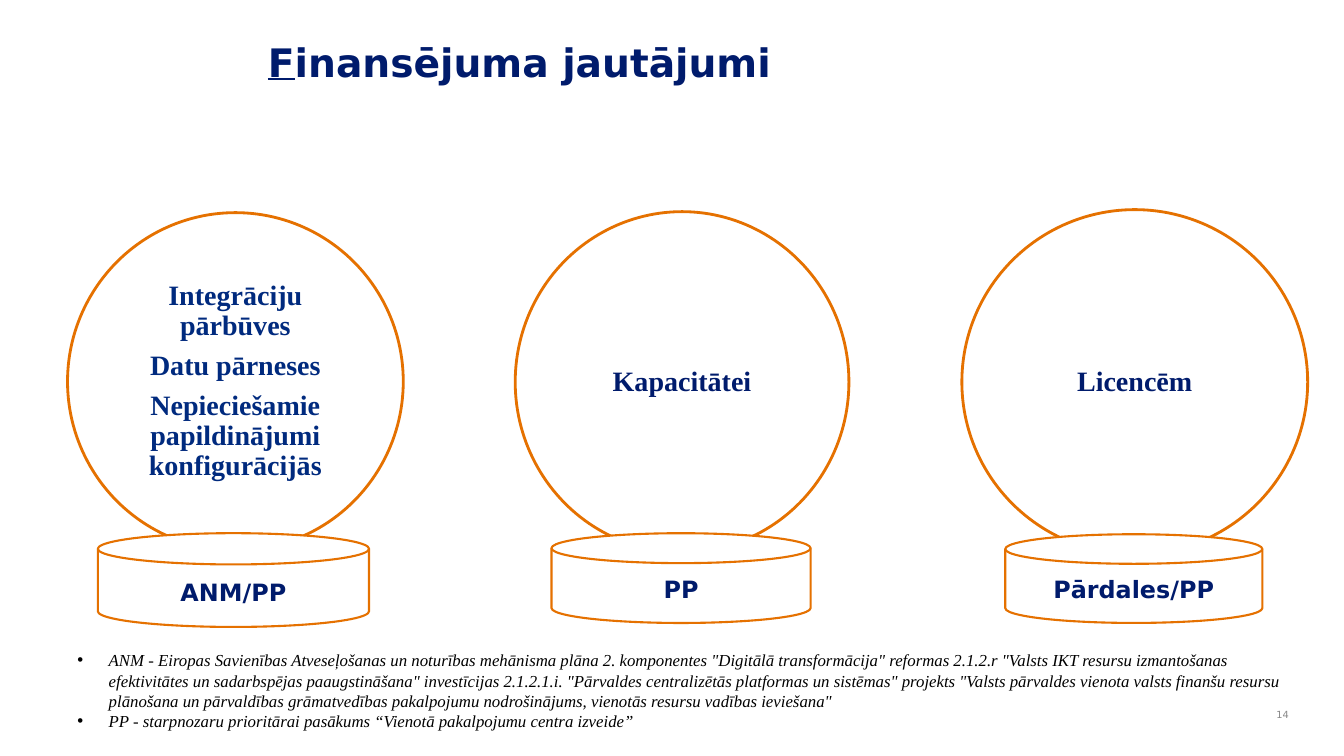
from dataclasses import dataclass

from lxml import etree
from pptx import Presentation
from pptx.dml.color import RGBColor
from pptx.enum.shapes import MSO_SHAPE
from pptx.enum.text import MSO_ANCHOR, PP_ALIGN
from pptx.oxml.ns import qn
from pptx.util import Inches, Pt

ELLIPSE = MSO_SHAPE.OVAL
DISK = MSO_SHAPE.FLOWCHART_MAGNETIC_DISK
TOP, MIDDLE, BOTTOM = MSO_ANCHOR.TOP, MSO_ANCHOR.MIDDLE, MSO_ANCHOR.BOTTOM
LEFT, CENTER, RIGHT = PP_ALIGN.LEFT, PP_ALIGN.CENTER, PP_ALIGN.RIGHT


@dataclass(frozen=True)
class Theme:
    sans: str = "DejaVu Sans"
    serif: str = "Times New Roman"
    navy: str = "001B6C"
    blue: str = "002A7E"
    orange: str = "E57100"
    white: str = "FFFFFF"
    black: str = "000000"
    gray: str = "898989"
    title_size: int = 28
    circle_size: int = 20
    disk_size: int = 17
    note_size: int = 12
    number_size: int = 7


def write_span(para, text, *, font, size, color, bold=False, italic=False, underline=False):
    span = para.add_run()
    span.text = text
    span.font.name = font
    span.font.size = Pt(size)
    span.font.color.rgb = RGBColor.from_string(color)
    span.font.bold = bold
    span.font.italic = italic
    span.font.underline = underline


def add_bullet(para, indent):
    properties = para._p.get_or_add_pPr()
    properties.set("marL", str(Inches(indent)))
    properties.set("indent", str(-Inches(indent)))
    etree.SubElement(properties, qn("a:buFont")).set("typeface", "Arial")
    etree.SubElement(properties, qn("a:buChar")).set("char", "•")


class SlideBuilder:
    def __init__(self, slide, theme):
        self.slide = slide
        self.theme = theme

    def fill_frame(self, frame, paragraphs, *, anchor, align, line_spacing=1.0,
                   space_after=0, bullet_indent=0, **style):
        frame.word_wrap = True
        frame.vertical_anchor = anchor
        for index, text in enumerate(paragraphs):
            para = frame.paragraphs[0] if index == 0 else frame.add_paragraph()
            para.alignment = align
            para.line_spacing = line_spacing
            para.space_after = Pt(space_after)
            if bullet_indent:
                add_bullet(para, bullet_indent)
            write_span(para, text, **style)

    def text_box(self, left, top, width, height, paragraphs, **style):
        box = self.slide.shapes.add_textbox(
            Inches(left), Inches(top), Inches(width), Inches(height))
        self.fill_frame(box.text_frame, paragraphs, **style)
        return box

    def outlined_shape(self, kind, left, top, width, height, line_width):
        shape = self.slide.shapes.add_shape(
            kind, Inches(left), Inches(top), Inches(width), Inches(height))
        shape.shadow.inherit = False
        shape.fill.solid()
        shape.fill.fore_color.rgb = RGBColor.from_string(self.theme.white)
        shape.line.color.rgb = RGBColor.from_string(self.theme.orange)
        shape.line.width = Pt(line_width)
        return shape

    def circle(self, place, paragraphs, color):
        frame = self.outlined_shape(ELLIPSE, *place, line_width=2).text_frame
        frame.margin_left = frame.margin_right = Inches(0.03)
        frame.margin_top = frame.margin_bottom = Inches(0.03)
        self.fill_frame(frame, paragraphs, anchor=MIDDLE, align=CENTER,
                        line_spacing=0.9, space_after=7, font=self.theme.serif,
                        size=self.theme.circle_size, color=color, bold=True)

    def disk(self, place, label):
        shape = self.outlined_shape(DISK, *place, line_width=1.5)
        self.fill_frame(shape.text_frame, [label], anchor=BOTTOM, align=CENTER,
                        font=self.theme.sans, size=self.theme.disk_size,
                        color=self.theme.navy, bold=True)

    def title(self, first_letter, rest):
        style = dict(font=self.theme.sans, size=self.theme.title_size,
                     color=self.theme.navy, bold=True)
        box = self.text_box(2.56, 0.33, 7.53, 1.19, [first_letter],
                            anchor=TOP, align=LEFT, underline=True, **style)
        write_span(box.text_frame.paragraphs[0], rest, **style)

    def footnotes(self, notes):
        self.text_box(0.67, 6.4, 12.22, 0.91, notes, anchor=TOP, align=LEFT,
                      bullet_indent=0.31, font=self.theme.serif,
                      size=self.theme.note_size, color=self.theme.black, italic=True)

    def page_number(self, number):
        self.text_box(12.44, 6.92, 0.44, 0.33, [number], anchor=MIDDLE, align=RIGHT,
                      font=self.theme.sans, size=self.theme.number_size,
                      color=self.theme.gray)


def main():
    theme = Theme()
    deck = Presentation()
    deck.slide_width = Inches(13.33)
    deck.slide_height = Inches(7.5)
    page = SlideBuilder(deck.slides.add_slide(deck.slide_layouts[6]), theme)

    needs = [
        ((0.67, 2.11, 3.33, 3.35),
         ["Integrāciju pārbūves", "Datu pārneses",
          "Nepieciešamie papildinājumi konfigurācijās"],
         theme.blue, (0.97, 5.29, 2.69, 0.93), "ANM/PP"),
        ((5.11, 2.1, 3.31, 3.38), ["Kapacitātei"],
         theme.navy, (5.47, 5.29, 2.57, 0.89), "PP"),
        ((9.54, 2.08, 3.43, 3.42), ["Licencēm"],
         theme.navy, (9.97, 5.3, 2.55, 0.88), "Pārdales/PP"),
    ]

    page.page_number("14")
    page.title("F", "inansējuma jautājumi")
    for circle_place, paragraphs, color, disk_place, source in needs:
        page.circle(circle_place, paragraphs, color)
        page.disk(disk_place, source)
    page.footnotes([
        'ANM - Eiropas Savienības Atveseļošanas un noturības mehānisma plāna '
        '2. komponentes "Digitālā transformācija" reformas 2.1.2.r "Valsts IKT '
        'resursu izmantošanas efektivitātes un sadarbspējas paaugstināšana" '
        'investīcijas 2.1.2.1.i. "Pārvaldes centralizētās platformas un sistēmas" '
        'projekts "Valsts pārvaldes vienota valsts finanšu resursu plānošana un '
        'pārvaldības grāmatvedības pakalpojumu nodrošinājums, vienotās resursu '
        'vadības ieviešana"',
        'PP - starpnozaru prioritārai pasākums “Vienotā pakalpojumu centra izveide”',
    ])

    deck.save("out.pptx")


if __name__ == "__main__":
    main()
